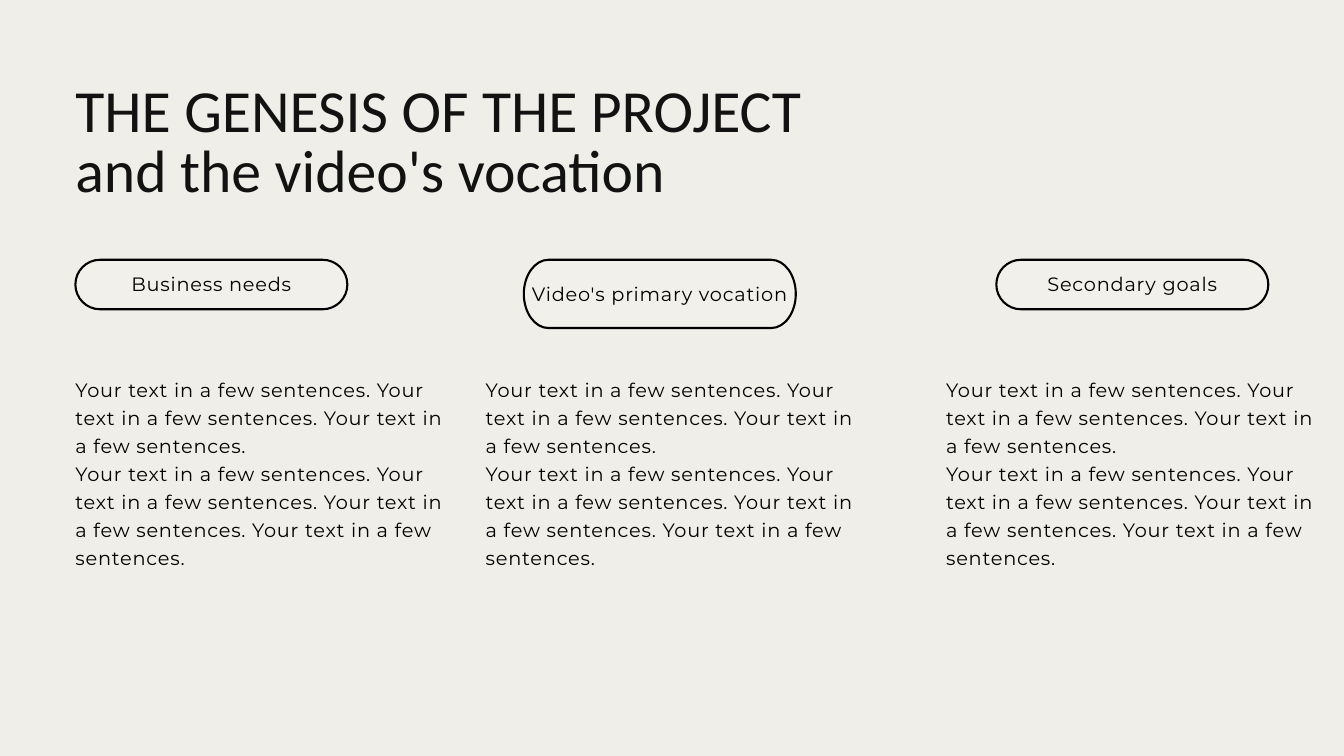
"""Build the project genesis slide with three labelled columns."""
from lxml import etree
from pptx import Presentation
from pptx import util as u
from pptx.dml.color import RGBColor
from pptx.enum import text as t
from pptx.oxml.ns import qn

TITLE = ["THE GENESIS OF THE PROJECT", "and the video's vocation"]
SENTENCE = "Your text in a few sentences."
BODY = [" ".join([SENTENCE] * count) for count in (3, 4)]
BODY_LEFTS = [2.85, 18.36, 35.76]
PILLS = [
    ("Business needs", 2.85, 1.87),
    ("Video's primary vocation", 19.8, 2.58),
    ("Secondary goals", 37.66, 1.87),
]
PILL_TOP, PILL_WIDTH, CORNER_WIDTH = 9.82, 10.28, 0.93
LABEL_RISE = 0.22
BODY_TOP, BODY_WIDTH, BODY_HEIGHT = 14.12, 14.07, 8.41
CURVE = 0.55


def color(value):
    return RGBColor.from_string(value)


def add_text(shapes, lines, left, top, width, height, *, font="Montserrat", size=20.7,
             ink="000000", leading=30, tracking=87, inset=0, align=None,
             anchor=t.MSO_ANCHOR.TOP, fit=t.MSO_AUTO_SIZE.SHAPE_TO_FIT_TEXT):
    box = shapes.add_textbox(u.Cm(left), u.Cm(top), u.Cm(width), u.Cm(height))
    frame = box.text_frame
    frame.word_wrap = True
    frame.auto_size = fit
    frame.vertical_anchor = anchor
    frame.margin_left = frame.margin_right = u.Cm(inset)
    frame.margin_top = frame.margin_bottom = u.Cm(inset)
    for index, line in enumerate(lines):
        para = frame.paragraphs[0] if index == 0 else frame.add_paragraph()
        para.alignment = align
        para.line_spacing = u.Pt(leading)
        span = para.add_run()
        span.text = line
        span.font.name = font
        span.font.size = u.Pt(size)
        span.font.color.rgb = color(ink)
        if tracking:
            span.font._element.set("spc", str(tracking))


def round_ends(pill):
    outline = next(pill._element.iter(qn("a:path")))
    steps = [step for step in outline if len(step)]
    ends = [(int(step[0].get("x")), int(step[0].get("y"))) for step in steps]
    for index, ((x1, y1), (x2, y2)) in enumerate(zip(ends, ends[1:]), 1):
        if y1 == y2:
            continue
        dx, dy = CURVE * (x2 - x1), CURVE * (y2 - y1)
        if index % 3 == 1:
            controls = [(x1 + dx, y1), (x2, y2 - dy)]
        else:
            controls = [(x1, y1 + dy), (x2 - dx, y2)]
        steps[index].tag = qn("a:cubicBezTo")
        for place, (x, y) in enumerate(controls):
            point = etree.Element(qn("a:pt"), x=str(round(x)), y=str(round(y)))
            steps[index].insert(place, point)


def add_pill(shapes, left, top, width, height):
    right, middle, bottom = left + width, top + height / 2, top + height
    near, far = left + CORNER_WIDTH, right - CORNER_WIDTH
    corners = [(far, top), (right, middle), (far, bottom),
               (near, bottom), (left, middle), (near, top)]
    points = [(u.Cm(x), u.Cm(y)) for x, y in corners]
    builder = shapes.build_freeform(*points[0], scale=1.0)
    builder.add_line_segments(points[1:], close=True)
    pill = builder.convert_to_shape()
    round_ends(pill)
    pill.shadow.inherit = False
    pill.fill.solid()
    pill.fill.fore_color.rgb = color("F1F0EA")
    pill.line.color.rgb = color("000000")
    pill.line.width = u.Pt(2.25)


def add_body(page, left):
    add_text(page.shapes, BODY, left, BODY_TOP, BODY_WIDTH, BODY_HEIGHT)


def main():
    deck = Presentation()
    deck.slide_width, deck.slide_height = u.Cm(50.8), u.Cm(28.575)
    page = deck.slides.add_slide(deck.slide_layouts[6])
    page.background.fill.solid()
    page.background.fill.fore_color.rgb = color("EFEEE8")

    add_text(page.shapes, TITLE, 2.85, 3.2, 45.09, 4.6, font="Calibri", size=64,
             ink="121212", leading=64, tracking=0)
    add_body(page, BODY_LEFTS[0])
    for label, left, height in PILLS:
        group = page.shapes.add_group_shape()
        add_pill(group.shapes, left, PILL_TOP, PILL_WIDTH, height)
        add_text(group.shapes, [label], left, PILL_TOP - LABEL_RISE, PILL_WIDTH,
                 height + LABEL_RISE, inset=0.15, align=t.PP_ALIGN.CENTER,
                 anchor=t.MSO_ANCHOR.MIDDLE, fit=t.MSO_AUTO_SIZE.NONE)
    for left in BODY_LEFTS[1:]:
        add_body(page, left)
    deck.save("out.pptx")


if __name__ == "__main__":
    main()
